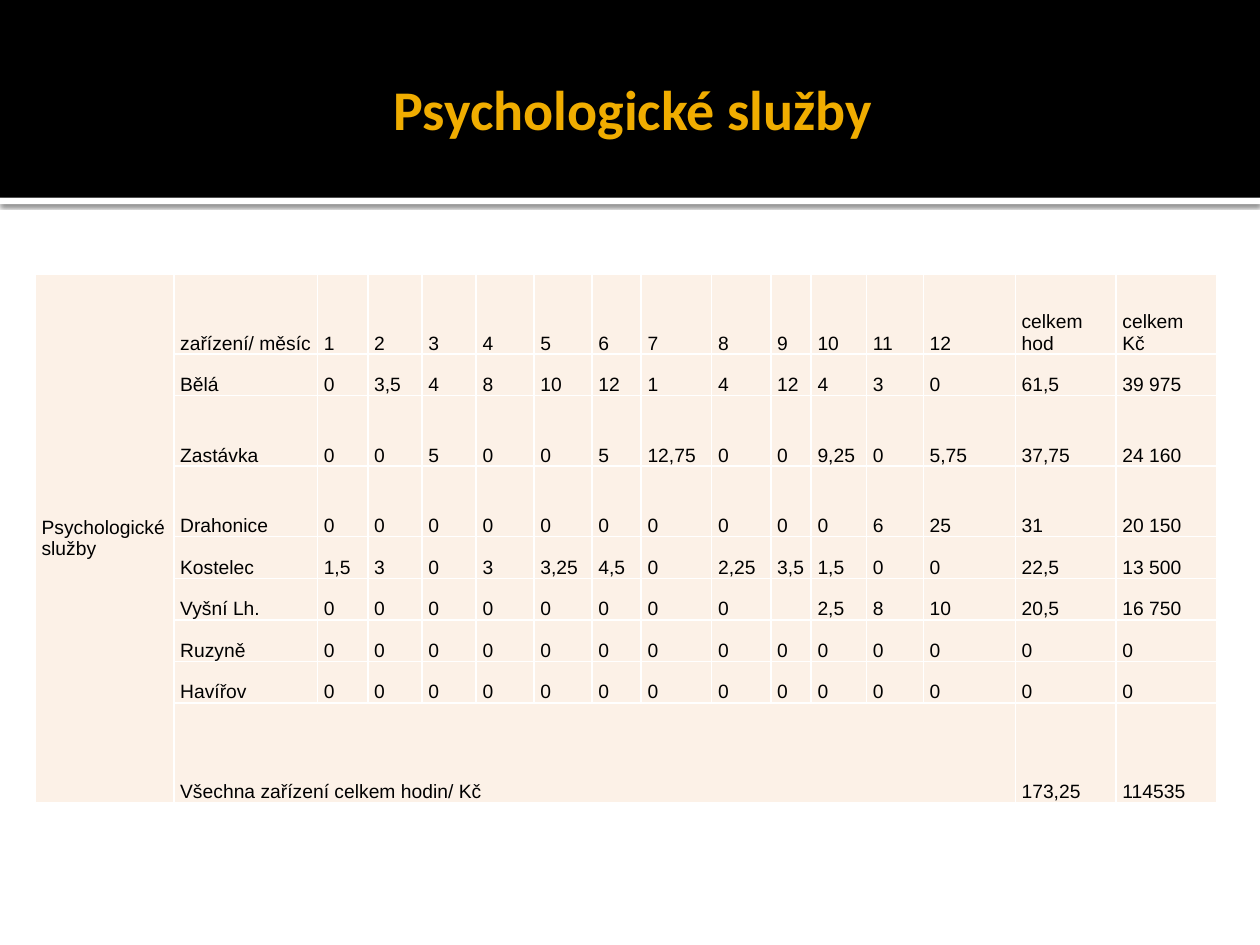
from lxml.etree import SubElement
from pptx import Presentation
from pptx.dml.color import RGBColor
from pptx.enum.shapes import MSO_SHAPE
from pptx.enum.text import MSO_ANCHOR, PP_ALIGN
from pptx.oxml import parse_xml
from pptx.oxml.ns import nsdecls, qn
from pptx.util import Inches, Pt

BLACK = RGBColor(0x00, 0x00, 0x00)
WHITE = RGBColor(0xFF, 0xFF, 0xFF)
GOLD = RGBColor(0xF0, 0xAD, 0x00)
CREAM = RGBColor(0xFC, 0xF1, 0xE7)

COLS = [1.1, 1.14, 0.4, 0.43, 0.43, 0.46, 0.46, 0.39,
        0.56, 0.47, 0.32, 0.44, 0.45, 0.73, 0.8, 0.8]
HEIGHTS = [0.63, 0.33, 0.56, 0.56, 0.33, 0.33, 0.33, 0.33, 0.79]
GROUP = "Psychologické služby"
TOTAL = "Všechna zařízení celkem hodin/ Kč"
ROWS = [
    ["zařízení/ měsíc", *map(str, range(1, 13)), "celkem hod", "celkem Kč"],
    ["Bělá", *"0 3,5 4 8 10 12 1 4 12 4 3 0 61,5".split(), "39 975"],
    ["Zastávka", *"0 0 5 0 0 5 12,75 0 0 9,25 0 5,75 37,75".split(), "24 160"],
    ["Drahonice", *"0 0 0 0 0 0 0 0 0 0 6 25 31".split(), "20 150"],
    ["Kostelec", *"1,5 3 0 3 3,25 4,5 0 2,25 3,5 1,5 0 0 22,5".split(), "13 500"],
    ["Vyšní Lh.", *["0"] * 8, "", "2,5", "8", "10", "20,5", "16 750"],
    ["Ruzyně", *["0"] * 14],
    ["Havířov", *["0"] * 14],
    [TOTAL, *[""] * 12, "173,25", "114535"],
]


def write(frame, text, font="Arial", size=11, color=BLACK, bold=False,
          align=PP_ALIGN.JUSTIFY):
    para = frame.paragraphs[0]
    para.alignment = align
    para.font.size = Pt(size)
    if text:
        run = para.add_run()
        run.text = text
        run.font.name = font
        run.font.size = Pt(size)
        run.font.bold = bold
        run.font.color.rgb = color


def edge(cell, color=WHITE, width=1):
    """Draw a plain line on all four sides of a cell."""
    props = cell._tc.get_or_add_tcPr()
    for spot, side in enumerate(("lnL", "lnR", "lnT", "lnB")):
        line = parse_xml(f'<a:{side} {nsdecls("a")} w="{Pt(width)}"><a:solidFill>'
                         f'<a:srgbClr val="{color}"/></a:solidFill></a:{side}>')
        props.insert(spot, line)


class Deck:
    def __init__(self):
        self.show = Presentation()
        self.show.slide_width, self.show.slide_height = Inches(10), Inches(7.5)
        self.slide = self.show.slides.add_slide(self.show.slide_layouts[5])

    def band(self, top, height, color, shadow=False):
        box = self.slide.shapes.add_shape(
            MSO_SHAPE.RECTANGLE, 0, Inches(top), Inches(10), Inches(height))
        box.fill.solid()
        box.fill.fore_color.rgb = color
        box.line.fill.background()
        box.shadow.inherit = False
        if shadow:
            cast = SubElement(
                box.element.spPr.find(qn("a:effectLst")), qn("a:outerShdw"),
                blurRad=str(Pt(2.5)), dist=str(Pt(0.8)), dir="5400000",
                algn="t", rotWithShape="0")
            tint = SubElement(cast, qn("a:srgbClr"), val=str(BLACK))
            SubElement(tint, qn("a:alpha"), val="60000")

    def title(self, text):
        box = self.slide.shapes.title
        box.left, box.top = Inches(0.5), Inches(0.17)
        box.width, box.height = Inches(9), Inches(1.37)
        frame = box.text_frame
        frame.vertical_anchor = MSO_ANCHOR.MIDDLE
        frame.margin_left = Inches(0.1)
        frame.margin_right = frame.margin_top = frame.margin_bottom = Inches(0.05)
        write(frame, text, font="Calibri", size=32, color=GOLD, bold=True,
              align=PP_ALIGN.CENTER)
        # The title was made with the slide, so bring it in front of the bands.
        box.element.getparent().append(box.element)

    def table(self, left, top):
        grid = self.slide.shapes.add_table(
            len(HEIGHTS), len(COLS), Inches(left), Inches(top),
            Inches(sum(COLS)), Inches(sum(HEIGHTS))).table
        grid.first_row = grid.horz_banding = False
        for col, width in zip(grid.columns, COLS):
            col.width = Inches(width)
        for row, height in zip(grid.rows, HEIGHTS):
            row.height = Inches(height)
        for r, row in enumerate(ROWS):
            group = GROUP if r == 0 else ""
            for c, text in enumerate([group, *row]):
                self.cell(grid.cell(r, c), text,
                          MSO_ANCHOR.BOTTOM if c else MSO_ANCHOR.MIDDLE)
        last = len(ROWS) - 1
        grid.cell(0, 0).merge(grid.cell(last, 0))
        grid.cell(last, 1).merge(grid.cell(last, 13))

    def cell(self, cell, text, anchor):
        cell.margin_left = cell.margin_right = Inches(0.05)
        cell.margin_top = cell.margin_bottom = 0
        cell.vertical_anchor = anchor
        cell.fill.solid()
        cell.fill.fore_color.rgb = CREAM
        edge(cell)
        write(cell.text_frame, text)


def main():
    deck = Deck()
    deck.band(1.57, 0.05, WHITE, shadow=True)
    deck.band(0, 1.57, BLACK)
    deck.title("Psychologické služby")
    deck.table(0.28, 2.18)
    deck.show.save("out.pptx")


if __name__ == "__main__":
    main()
